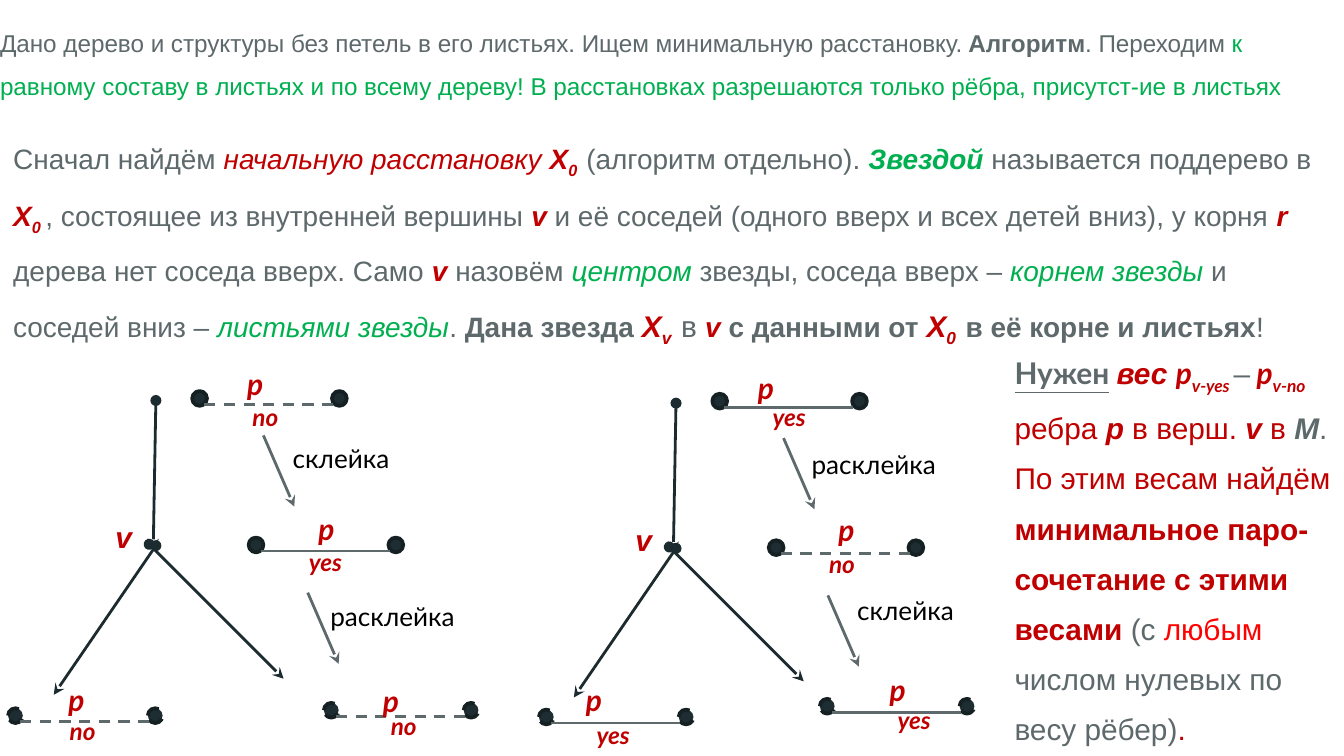
import pptx
import pptx.dml.color
import pptx.enum.dml
import pptx.enum.shapes
import pptx.enum.text
import pptx.oxml.ns
import pptx.util
from lxml import etree

Inches, Pt = pptx.util.Inches, pptx.util.Pt
qn = pptx.oxml.ns.qn

COLOURS = {
    "grey": "5E696C", "red": "C00000", "green": "00B050", "bright": "FF0000",
    "black": "000000", "dot": "1E2D31", "rim": "152023", "branch": "1C2B2F",
}
LABEL_INSETS = (0.1, 0.1, 0.1, 0.1)
STEP_SIZES = {"склейка": (1.07, 0.43), "расклейка": (1.17, 0.67)}


def rgb(name):
    return pptx.dml.color.RGBColor.from_string(COLOURS[name])


class Board:
    """Holds the style and the slide being drawn."""

    def __init__(self, slide):
        self.slide = slide
        self.shapes = slide.shapes

    def fill_frame(self, tf, paragraphs, size, font, spacing, insets):
        """Each run is (text, colour, marks, size, font); marks are b, i, u and _ (subscript)."""
        tf.word_wrap = True
        tf.auto_size = pptx.enum.text.MSO_AUTO_SIZE.NONE
        tf.vertical_anchor = pptx.enum.text.MSO_ANCHOR.TOP
        tf.margin_left, tf.margin_top, tf.margin_right, tf.margin_bottom = map(Inches, insets)
        for i, runs in enumerate(paragraphs):
            p = tf.paragraphs[0] if i == 0 else tf.add_paragraph()
            p.alignment = pptx.enum.text.PP_ALIGN.LEFT
            p.line_spacing = spacing
            for text, colour, *rest in runs:
                marks, run_size, run_font = rest + ["", size, font][len(rest):]
                r = p.add_run()
                r.text = text
                r.font.size, r.font.name = Pt(run_size), run_font
                r.font.color.rgb = rgb(colour)
                r.font.bold, r.font.italic = "b" in marks, "i" in marks
                r.font.underline = "u" in marks
                if "_" in marks:
                    r.font._element.set("baseline", "-25000")

    def title(self, x, y, w, h, runs, size):
        sp = self.shapes.title
        sp.left, sp.top, sp.width, sp.height = map(Inches, (x, y, w, h))
        self.fill_frame(sp.text_frame, [runs], size, "Arial", 1.5, (0, 0.1, 0, 0.1))

    def text(self, x, y, w, h, paragraphs, size, font="Arial", spacing=1.0, insets=LABEL_INSETS):
        sp = self.shapes.add_textbox(*map(Inches, (x, y, w, h)))
        self.fill_frame(sp.text_frame, paragraphs, size, font, spacing, insets)

    def line(self, x1, y1, x2, y2, colour="grey", dashed=False, head=None, tail=None):
        c = self.shapes.add_connector(
            pptx.enum.shapes.MSO_CONNECTOR.STRAIGHT, *map(Inches, (x1, y1, x2, y2)))
        c.line.width = Pt(1.5)
        c.line.color.rgb = rgb(colour)
        if dashed:
            c.line.dash_style = pptx.enum.dml.MSO_LINE.DASH
        ln = c.line._get_or_add_ln()
        for tag, kind in (("a:headEnd", head), ("a:tailEnd", tail)):
            if kind:
                etree.SubElement(ln, qn(tag)).set("type", kind)
        etree.SubElement(c._element.spPr, qn("a:effectLst"))

    def dot(self, x, y, dashed):
        sp = self.shapes.add_shape(
            pptx.enum.shapes.MSO_SHAPE.OVAL, *map(Inches, (x, y, 0.11, 0.11)))
        sp.shadow.inherit = False
        sp.fill.solid()
        sp.fill.fore_color.rgb = rgb("dot")
        sp.line.color.rgb = rgb("rim")
        sp.line.width = Pt(2)
        if dashed:
            sp.line.dash_style = pptx.enum.dml.MSO_LINE.DASH

    def edge(self, x, y, state, p_at, state_at, leaf):
        """Two dots joined by a line, solid for yes and dashed for no, with both labels."""
        for dx in (1.04, 0):
            self.dot(x + dx, y, leaf)
        self.line(x + 0.09, y + 0.1, x + 1.05, y + 0.1, dashed=state == "no")
        self.text(*p_at, 0.39, 0.47, [[("p", "red", "bi")]], 16, "Lato")
        self.text(*state_at, 0.49, 0.42, [[(state, "red", "bi")]], 13, "Lato")

    def star(self, dx, dy, edges, steps):
        """A vertex v with its neighbours; dx, dy shift it from the first star."""
        for x1, y1, x2, y2 in ((1.11, 4.05, 2.11, 5.05), (1.16, 4.06, 0.4, 5.17),
                               (1.16, 2.98, 1.14, 4.09)):
            self.line(x1 + dx, y1 + dy, x2 + dx, y2 + dy, "branch", head="oval", tail="stealth")
        self.text(0.76 + dx, 3.81 + dy, 0.33, 0.37, [[("v", "red", "bi")]], 16,
                  insets=(0.1, 0.05, 0.1, 0.05))
        for i, e in enumerate(edges):
            self.edge(*e, leaf=i > 1)
        for (x, y), (word, tx, ty) in zip(((1.96, 3.24), (2.29, 4.41)), steps):
            self.line(x + dx, y + dy, x + dx + 0.23, y + dy + 0.53, tail="stealth")
            self.text(tx, ty, *STEP_SIZES[word], [[(word, "black")]], 14, "Lato")


TITLE = [
    ("Дано дерево и структуры без петель в его листьях. Ищем минимальную расстановку. ", "grey"),
    ("Алгоритм", "grey", "b"), (". Переходим ", "grey"),
    ("к равному составу в листьях и по всему дереву! В расстановках разрешаются "
     "только рёбра, присутст-ие в листьях", "green"),
]
DEFINITION = [
    ("Сначал найдём ", "grey"), ("начальную расстановку ", "red", "i"),
    ("X", "red", "bi"), ("0  ", "red", "bi_"), ("(алгоритм отдельно). ", "grey"),
    ("Звездой", "green", "bi"), (" называется поддерево в ", "grey"),
    ("X", "red", "bi"), ("0 ", "red", "bi_"),
    (", состоящее из внутренней вершины ", "grey"), ("v", "red", "bi"),
    (" и её соседей (одного вверх и всех детей вниз), у корня ", "grey"), ("r ", "red", "bi"),
    ("дерева нет соседа вверх. Само ", "grey"), ("v ", "red", "bi"), ("назовём ", "grey"),
    ("центром", "green", "i"), (" звезды, соседа вверх – ", "grey"),
    ("корнем звезды", "green", "i"), (" и соседей вниз – ", "grey"),
    ("листьями звезды", "green", "i"), (". ", "grey"), ("Дана звезда ", "grey", "b"),
    ("X", "red", "bi", 16), ("v  ", "red", "bi_", 16), ("в ", "grey", "", 16),
    ("v ", "red", "bi"), ("с данными от ", "grey", "b"),
    ("X", "red", "bi", 16), ("0  ", "red", "bi_", 16),
    ("в её корне и листьях", "grey", "b"), ("!", "grey"),
]
WEIGHT = [
    [("Нужен", "grey", "bu", 16, "Lato"), (" ", "grey", "b", 16, "Lato"), ("вес ", "red", "bi"),
     ("p", "red", "bi", 16, "Lato"), ("v-yes ", "red", "bi_", 16, "Lato"), ("–", "grey"),
     (" p", "red", "bi", 16, "Lato"), ("v-no", "red", "bi_", 16, "Lato")],
    [("ребра ", "red"), ("p ", "red", "bi"), ("в верш. ", "red"), ("v", "red", "bi"),
     (" в ", "red"), ("M", "grey", "bi"), (".", "grey")],
    [("По этим весам найдём ", "red"),
     ("минимальное паро-сочетание с этими весами ", "red", "b"), ("(с ", "grey"),
     ("любым", "bright"), (" числом нулевых по весу рёбер)", "grey"), (".", "red")],
]
# Edge: dot x, dot y, state, place of "p", place of the state; root, centre, two leaves
LEFT_EDGES = [
    (1.43, 2.91, "no", (1.74, 2.62), (1.78, 2.89)),
    (1.85, 4.0, "yes", (2.27, 3.7), (2.2, 3.97)),
    (0.06, 5.27, "no", (0.41, 4.97), (0.42, 5.23)),
    (2.41, 5.23, "no", (2.75, 4.98), (2.81, 5.19)),
]
RIGHT_EDGES = [
    (5.3, 2.93, "yes", (5.54, 2.65), (5.65, 2.89)),
    (5.72, 4.02, "no", (6.14, 3.71), (6.07, 3.99)),
    (4.01, 5.28, "yes", (4.26, 4.97), (4.34, 5.26)),
    (6.1, 5.2, "yes", (6.52, 4.9), (6.58, 5.15)),
]


def main():
    prs = pptx.Presentation()
    prs.slide_width = Inches(10)
    prs.slide_height = prs.slide_width * 9 // 16
    s = Board(prs.slides.add_slide(prs.slide_layouts[5]))
    s.title(0, 0, 10, 0.93, TITLE, 13)
    s.text(0, 0.81, 10, 1.88, [DEFINITION], 15, spacing=1.5)
    s.star(0, 0, LEFT_EDGES, [("склейка", 2.08, 3.19), ("расклейка", 2.36, 4.37)])
    s.star(3.87, 0.02, RIGHT_EDGES, [("расклейка", 5.94, 3.24), ("склейка", 6.28, 4.32)])
    s.text(7.45, 2.42, 2.65, 3.65, WEIGHT, 16, spacing=1.4)
    prs.save("out.pptx")


if __name__ == "__main__":
    main()
